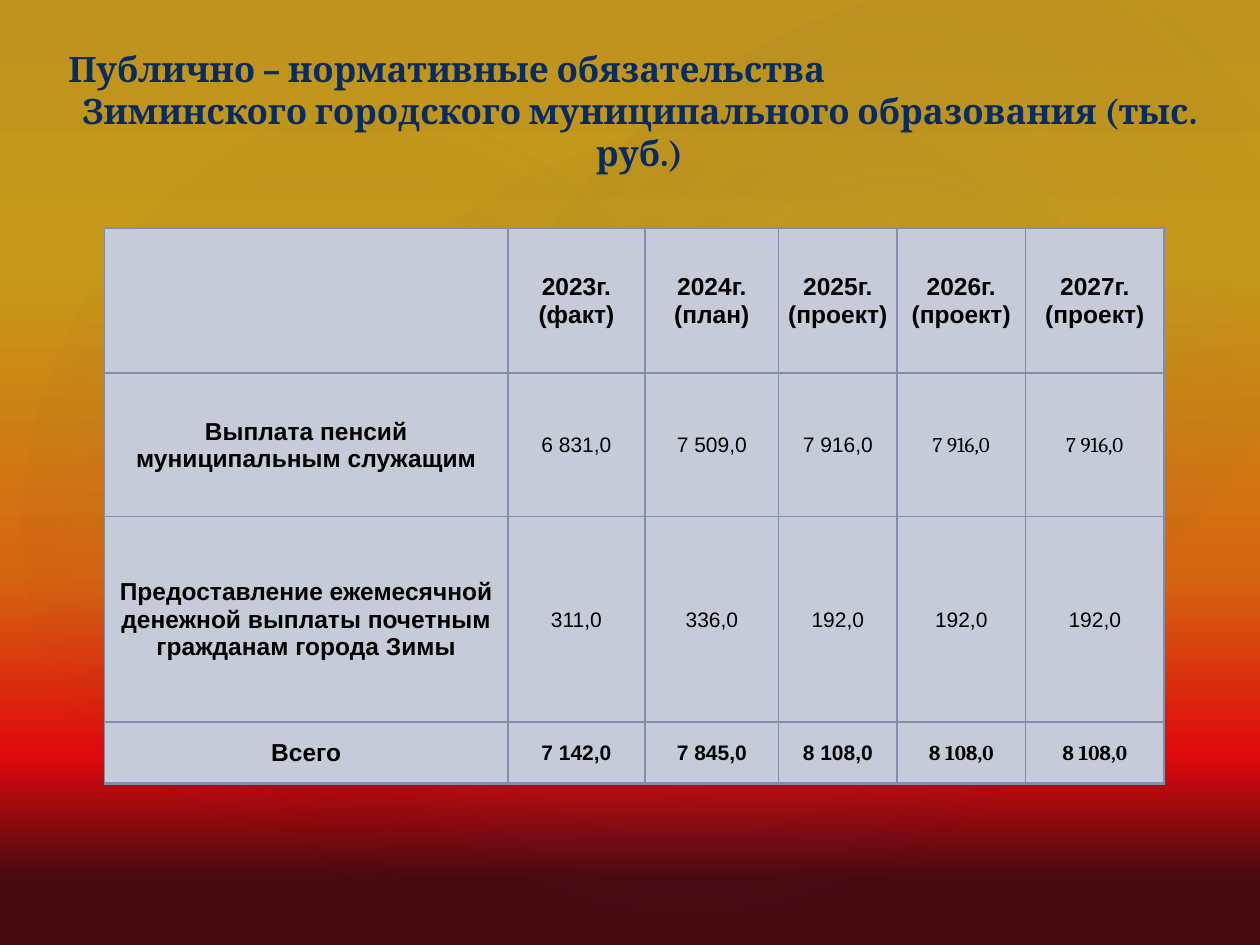
from lxml.etree import SubElement
from pptx import Presentation
from pptx.dml.color import RGBColor
from pptx.enum.shapes import MSO_SHAPE
from pptx.enum.text import MSO_ANCHOR, PP_ALIGN
from pptx.oxml import parse_xml
from pptx.oxml.ns import nsdecls, qn
from pptx.util import Inches, Pt

COLORS = {
    "gold_top": "BF931E", "gold": "C69A18", "orange": "D66510",
    "red": "DF080C", "maroon": "470A10", "glow": "C4BCC6", "navy": "242852",
    "title": "072C62", "text": "000000", "cell": "C5CBD9", "border": "7F8FA9",
}


def write_text(frame, text, size=14, font="Arial", color="text", bold=True,
               alignments=(PP_ALIGN.CENTER,)):
    frame.word_wrap = True
    frame.text = text
    for index, paragraph in enumerate(frame.paragraphs):
        paragraph.alignment = alignments[min(index, len(alignments) - 1)]
        for run in paragraph.runs:
            run.font.size = Pt(size)
            run.font.name = font
            run.font.bold = bold
            run.font.color.rgb = RGBColor.from_string(COLORS[color])


def gradient(stops, direction):
    stop_xml = "".join(
        f'<a:gs pos="{position * 1000}"><a:srgbClr val="{COLORS[color]}">'
        f'<a:alpha val="{opacity * 1000}"/></a:srgbClr></a:gs>'
        for position, color, opacity in stops)
    return parse_xml(f'<a:gradFill {nsdecls("a")} rotWithShape="1">'
                     f'<a:gsLst>{stop_xml}</a:gsLst>{direction}</a:gradFill>')


presentation = Presentation()
presentation.slide_width = Inches(10)
presentation.slide_height = Inches(7.5)
slide = presentation.slides.add_slide(presentation.slide_layouts[6])

background = slide.background.fill
background.gradient()
background_stops = [(0, "gold_top", 100), (28, "gold", 100), (61, "orange", 100),
                    (80, "red", 100), (93, "maroon", 100), (100, "maroon", 100)]
properties = slide.element.cSld.find(qn("p:bg")).find(qn("p:bgPr"))
properties.replace(properties.find(qn("a:gradFill")),
                   gradient(background_stops, '<a:lin ang="5400000" scaled="0"/>'))

radial = ('<a:path path="circle"><a:fillToRect l="50000" t="50000" '
          'r="50000" b="50000"/></a:path>')
glows = [
    (1.5, 1.14, 7.92, 6.24, 328.7, 7),
    (-0.3, 1.28, 6.06, 4.9, 294.3, 8),
    (3.58, 0.13, 7.09, 5.2, 328.7, 8),
]
for left, top, width, height, rotation, opacity in glows:
    shape = slide.shapes.add_shape(MSO_SHAPE.OVAL, *map(Inches, (left, top, width, height)))
    shape.rotation = rotation
    shape.shadow.inherit = False
    shape.line.fill.background()
    shape.fill.gradient()
    shape_properties = shape.element.spPr
    shape_properties.replace(
        shape_properties.find(qn("a:gradFill")),
        gradient([(0, "glow", opacity), (58, "navy", 0), (100, "navy", 0)], radial))

title = slide.shapes.add_shape(MSO_SHAPE.ROUNDED_RECTANGLE,
                               *map(Inches, (0.35, 0.44, 9.45, 0.87)))
title.shadow.inherit = False
title.fill.background()
title.line.fill.background()
title.text_frame.vertical_anchor = MSO_ANCHOR.MIDDLE
title.text_frame.margin_left = title.text_frame.margin_right = Inches(0.15)
write_text(title.text_frame,
           "Публично – нормативные обязательства\n"
           "Зиминского городского муниципального образования (тыс. руб.)",
           size=20, font="Cambria", color="title",
           alignments=(PP_ALIGN.LEFT, PP_ALIGN.CENTER))

rows = [
    ["", "2023г.\n(факт)", "2024г.\n(план)", "2025г.\n(проект)", "2026г.\n(проект)",
     "2027г.\n(проект)"],
    ["Выплата пенсий муниципальным служащим",
     "6 831,0", "7 509,0", "7 916,0", "7 916,0", "7 916,0"],
    ["Предоставление ежемесячной денежной выплаты почетным гражданам города Зимы",
     "311,0", "336,0", "192,0", "192,0", "192,0"],
    ["Всего", "7 142,0", "7 845,0", "8 108,0", "8 108,0", "8 108,0"],
]
column_widths = [3.2, 1.09, 1.06, 0.94, 1.02, 1.1]
row_heights = [1.15, 1.14, 1.63, 0.49]
cambria_cells = {(row, column) for row in (1, 3) for column in (4, 5)}
last_row = len(rows) - 1

table = slide.shapes.add_table(len(rows), len(column_widths), Inches(0.83), Inches(1.81),
                               Inches(sum(column_widths)), Inches(sum(row_heights))).table
for column, width in zip(table.columns, column_widths):
    column.width = Inches(width)
for row, height in zip(table.rows, row_heights):
    row.height = Inches(height)

for row_index, values in enumerate(rows):
    for column_index, value in enumerate(values):
        cell = table.cell(row_index, column_index)
        cell.margin_left = cell.margin_right = cell.margin_top = Inches(0.01)
        cell.margin_bottom = 0
        cell.vertical_anchor = MSO_ANCHOR.MIDDLE
        is_label = row_index == 0 or column_index == 0
        write_text(cell.text_frame, value, size=14 if is_label else 12,
                   font="Cambria" if (row_index, column_index) in cambria_cells else "Arial",
                   bold=is_label or row_index == last_row)
        cell_properties = cell._tc.get_or_add_tcPr()
        for side in ("lnL", "lnR", "lnT", "lnB"):
            thick = row_index == last_row and side in ("lnT", "lnB")
            border = SubElement(cell_properties, qn(f"a:{side}"), w=str(Pt(1.5 if thick else 1)))
            border_fill = SubElement(border, qn("a:solidFill"))
            SubElement(border_fill, qn("a:srgbClr"), val=COLORS["border"])
        cell.fill.solid()
        cell.fill.fore_color.rgb = RGBColor.from_string(COLORS["cell"])

presentation.save("out.pptx")
